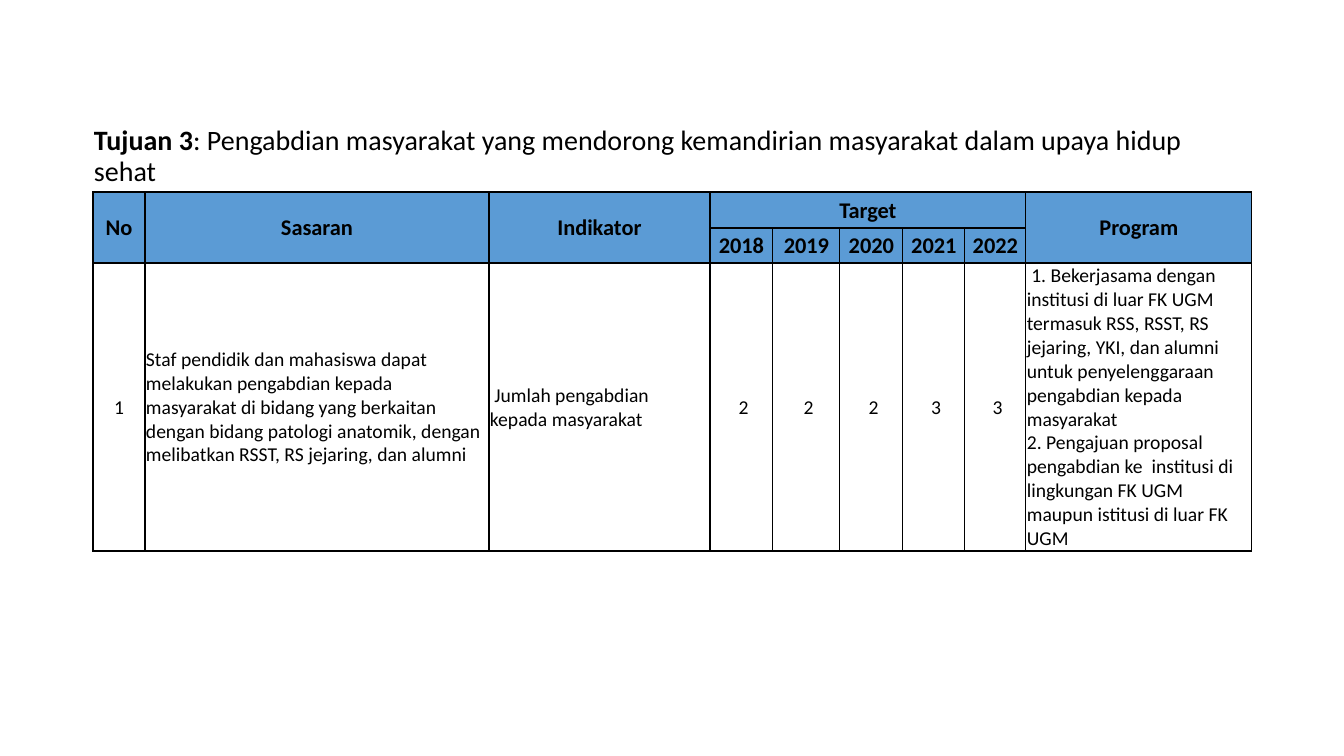
from lxml import etree
from pptx import Presentation
from pptx.dml.color import RGBColor
from pptx.enum.text import MSO_ANCHOR, PP_ALIGN
from pptx.oxml.ns import qn
from pptx.util import Emu, Pt

MIDDLE = MSO_ANCHOR.MIDDLE
LEFT, CENTER = PP_ALIGN.LEFT, PP_ALIGN.CENTER
SCALE = 12192000 / 1344
COLORS = {"text": "000000", "border": "000000", "header": "5B9BD5"}


def px(length):
    """Turn whole pixels into EMU."""
    return Emu(round(length * SCALE))


class SlideBuilder:
    """Hold the style and the current slide."""

    font = "Calibri"

    def __init__(self, slide):
        self.slide = slide

    def run(self, paragraph, text, size, bold=False):
        """Add one styled run."""
        run = paragraph.add_run()
        run.text = text
        run.font.name = self.font
        run.font.size = Pt(size)
        run.font.bold = bold
        run.font.color.rgb = RGBColor.from_string(COLORS["text"])

    def heading(self, left, top, width, height, parts, size):
        """Add a heading made of (text, bold) parts."""
        frame = self.slide.shapes.add_textbox(px(left), px(top), px(width), px(height)).text_frame
        frame.word_wrap = True
        frame.vertical_anchor = MIDDLE
        paragraph = frame.paragraphs[0]
        paragraph.line_spacing = 0.9
        for text, bold in parts:
            self.run(paragraph, text, size, bold)

    def table(self, left, top, widths, heights):
        """Add a bordered table without fills."""
        frame = self.slide.shapes.add_table(
            len(heights), len(widths), px(left), px(top), px(sum(widths)), px(sum(heights)))
        table = frame.table
        table.first_row = table.horz_banding = False
        for column, width in zip(table.columns, widths):
            column.width = px(width)
        for row, height in zip(table.rows, heights):
            row.height = px(height)
        for cell in table.iter_cells():
            self.borders(cell)
            cell.fill.background()
        return table

    def borders(self, cell):
        """Draw a thin line on all four sides of a cell."""
        properties = cell._tc.get_or_add_tcPr()
        for side in ("a:lnL", "a:lnR", "a:lnT", "a:lnB"):
            line = etree.SubElement(properties, qn(side), w=str(Pt(1)))
            fill = etree.SubElement(line, qn("a:solidFill"))
            etree.SubElement(fill, qn("a:srgbClr"), val=COLORS["border"])

    def cell(self, cell, paragraphs, size, bold=False, align=CENTER, fill=None):
        """Fill one cell with paragraphs."""
        cell.margin_left = cell.margin_right = cell.margin_top = px(1)
        cell.margin_bottom = 0
        cell.vertical_anchor = MIDDLE
        if fill:
            cell.fill.solid()
            cell.fill.fore_color.rgb = RGBColor.from_string(COLORS[fill])
        frame = cell.text_frame
        for index, text in enumerate(paragraphs):
            paragraph = frame.add_paragraph() if index else frame.paragraphs[0]
            paragraph.alignment = align
            self.run(paragraph, text, size, bold)


HEADERS = [
    ("No", 0, 0, 1, 0),
    ("Sasaran", 0, 1, 1, 1),
    ("Indikator", 0, 2, 1, 2),
    ("Target", 0, 3, 0, 7),
    ("Program", 0, 8, 1, 8),
] + [(str(2018 + year), 1, 3 + year, 1, 3 + year) for year in range(5)]

GOAL = [
    (["1"], CENTER),
    (["Staf pendidik dan mahasiswa dapat melakukan pengabdian kepada masyarakat di bidang "
      "yang berkaitan dengan bidang patologi anatomik, dengan melibatkan RSST, RS jejaring, "
      "dan alumni"], LEFT),
    ([" Jumlah pengabdian kepada masyarakat"], LEFT),
    *[([f" {target}"], CENTER) for target in (2, 2, 2, 3, 3)],
    ([" 1. Bekerjasama dengan institusi di luar FK UGM termasuk RSS, RSST, RS jejaring, YKI, "
      "dan alumni untuk penyelenggaraan pengabdian kepada masyarakat",
      "2. Pengajuan proposal pengabdian ke  institusi di lingkungan FK UGM maupun istitusi "
      "di luar FK UGM"], LEFT),
]


def main():
    """Build and save the slide."""
    deck = Presentation()
    deck.slide_width, deck.slide_height = px(1344), px(756)
    builder = SlideBuilder(deck.slides.add_slide(deck.slide_layouts[6]))
    builder.heading(84, 121, 1125, 72, [
        ("Tujuan 3", True),
        (": Pengabdian masyarakat yang mendorong kemandirian masyarakat dalam upaya hidup sehat",
         False),
    ], 20)
    plan = builder.table(93, 192, [52, 344, 221, 63, 67, 63, 62, 61, 226], [36, 35, 288])
    for title, top, left, bottom, right in HEADERS:
        header = plan.cell(top, left)
        if (top, left) != (bottom, right):
            header.merge(plan.cell(bottom, right))
        builder.cell(header, [title], 16, True, fill="header")
    for column, (paragraphs, align) in enumerate(GOAL):
        builder.cell(plan.cell(2, column), paragraphs, 14, align=align)
    deck.save("out.pptx")


if __name__ == "__main__":
    main()
